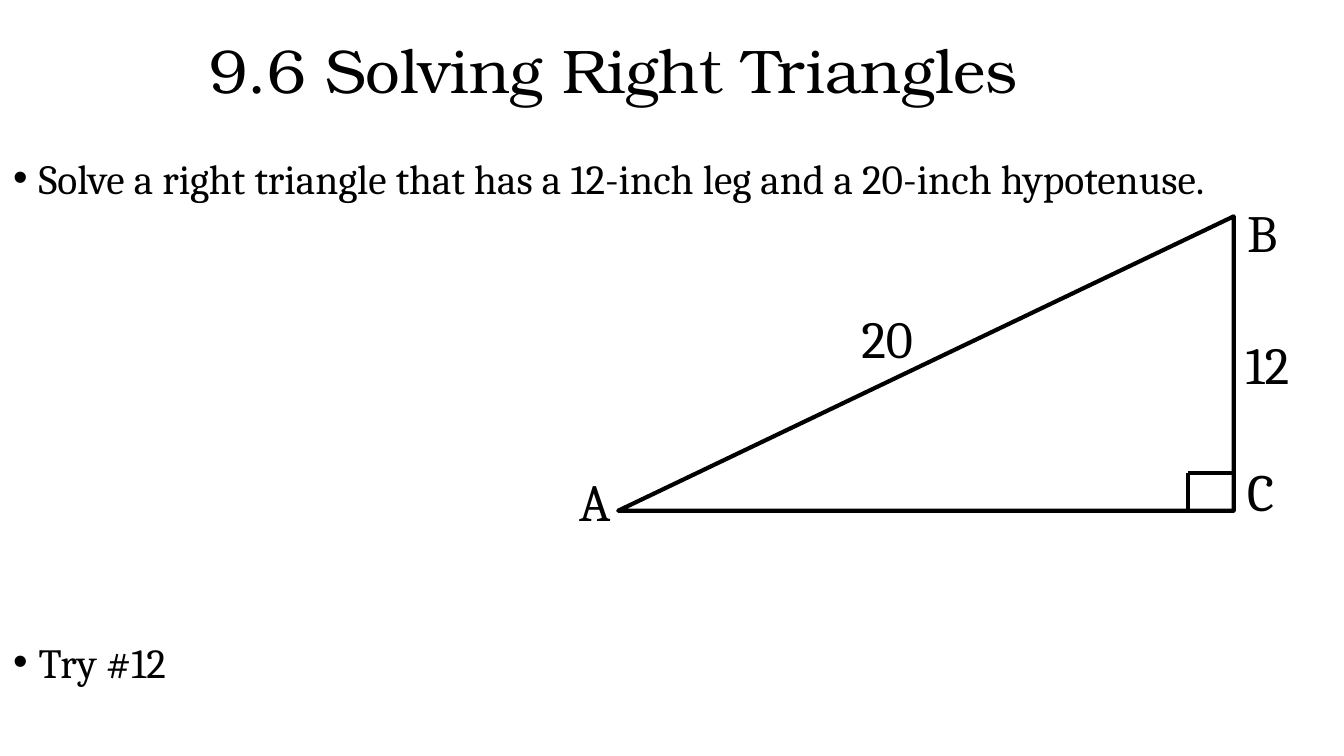
import pptx
import pptx.dml.color
import pptx.enum.shapes
import pptx.enum.text
import pptx.oxml
import pptx.oxml.ns
import pptx.util
from pptx.util import Inches, Pt

INK = "000000"
BODY = "Cambria"
TITLE = ("9.6 Solving Right Triangles", 1.46, 0, 8.54, 1.09)
BULLETS = [
    ("Solve a right triangle that has a 12-inch leg and a 20-inch hypotenuse.", 1.16),
    ("Try #12", 4.76),
]
LABELS = [
    ("20", 6.31, 2.23, 0.78),
    ("12", 9.17, 2.42, 0.83),
    ("A", 4.21, 3.44, 0.61),
    ("C", 9.18, 3.37, 0.61),
    ("B", 9.18, 1.44, 0.61),
]
LEFT, TOP, WIDTH, HEIGHT = 4.6, 1.61, 4.58, 2.19
MARK_W, MARK_H = 0.34, 0.28


def color(code):
    return pptx.dml.color.RGBColor.from_string(code)


def child(parent, tag, **attrs):
    """Append an empty drawing element to parent."""
    item = pptx.oxml.parse_xml(f"<a:{tag} {pptx.oxml.ns.nsdecls('a')}/>")
    for name, value in attrs.items():
        item.set(name, value)
    parent.append(item)


def write(slide, text, left, top, width, height, size, font=BODY):
    box = slide.shapes.add_textbox(*map(Inches, (left, top, width, height)))
    box.text_frame.word_wrap = True
    para = box.text_frame.paragraphs[0]
    run = para.add_run()
    run.text = text
    run.font.size = Pt(size)
    run.font.name = font
    run.font.color.rgb = color(INK)
    return box.text_frame, para


def bullet(para):
    props = para._p.get_or_add_pPr()
    indent = Inches(0.19)
    props.set("marL", str(indent))
    props.set("indent", str(-indent))
    child(props, "buFont", typeface="Arial")
    child(props, "buChar", char="•")


def stroke(shape):
    shape.line.color.rgb = color(INK)
    shape.line.width = Pt(2.25)


def main():
    deck = pptx.Presentation()
    deck.slide_width = Inches(10)
    deck.slide_height = deck.slide_width * 9 // 16
    slide = deck.slides.add_slide(deck.slide_layouts[6])

    frame, para = write(slide, *TITLE, 33, "TeX Gyre Bonum")
    frame.vertical_anchor = pptx.enum.text.MSO_ANCHOR.MIDDLE
    para.line_spacing = 0.9

    for text, top in BULLETS:
        frame, para = write(slide, text, 0, top, 10, 0.5, 22.2)
        para.line_spacing = 0.8
        bullet(para)

    triangle = slide.shapes.add_shape(
        pptx.enum.shapes.MSO_SHAPE.RIGHT_TRIANGLE,
        *map(Inches, (LEFT, TOP, WIDTH, HEIGHT)))
    triangle._element.spPr.xfrm.set("flipH", "1")
    triangle.shadow.inherit = False
    triangle.fill.background()
    stroke(triangle)

    # The right-angle mark sits in corner C.
    right, base = LEFT + WIDTH, TOP + HEIGHT
    inner, upper = right - MARK_W, base - MARK_H
    for ends in [(inner, base, inner, upper), (inner, upper, right, upper)]:
        line = slide.shapes.add_connector(
            pptx.enum.shapes.MSO_CONNECTOR.STRAIGHT, *map(Inches, ends))
        stroke(line)
        child(line._element.spPr, "effectLst")

    for text, left, top, width in LABELS:
        write(slide, text, left, top, width, 0.57, 28)

    deck.save("out.pptx")


if __name__ == "__main__":
    main()
